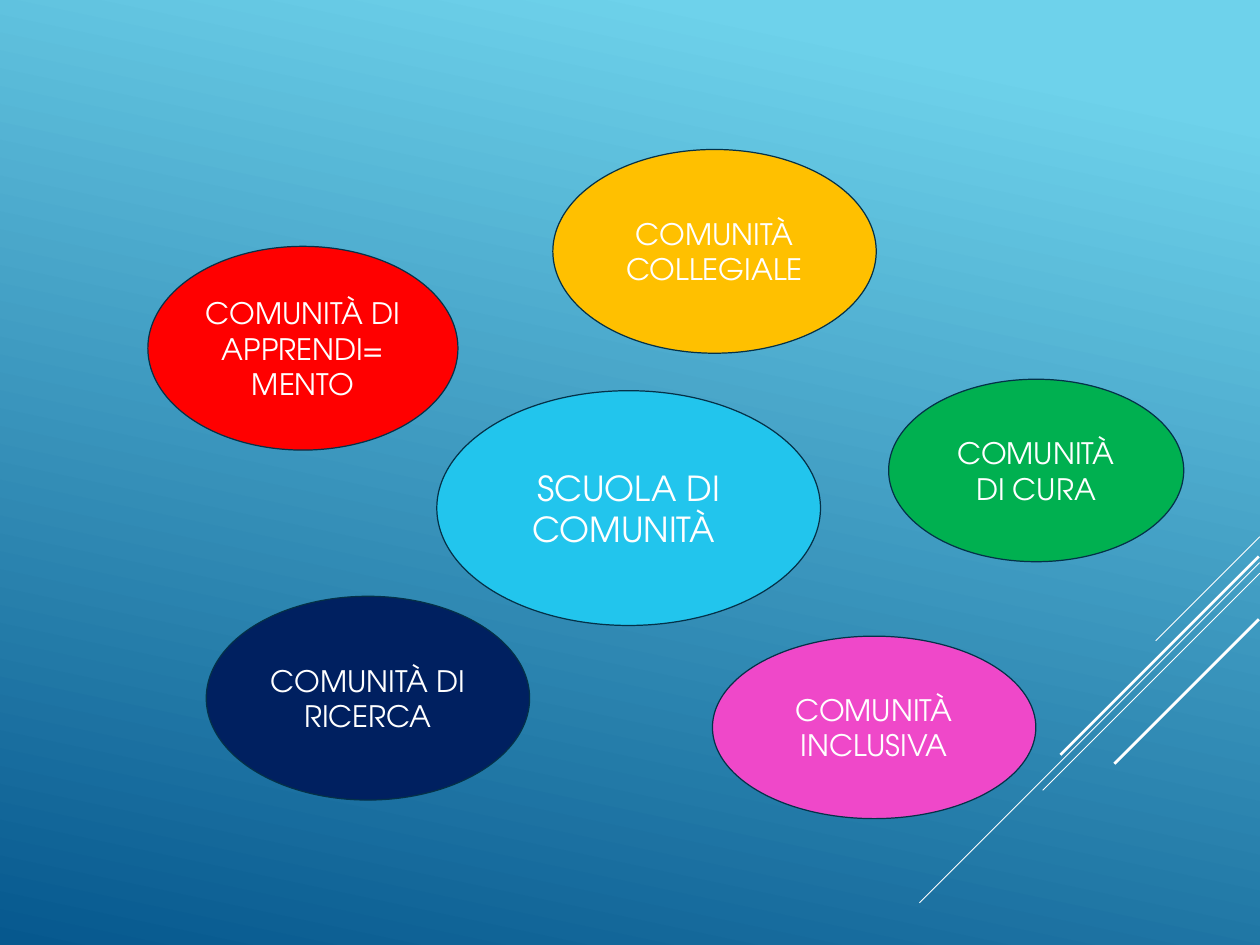
from dataclasses import dataclass

from lxml import etree
from pptx import Presentation
from pptx.dml.color import RGBColor
from pptx.enum.shapes import MSO_CONNECTOR, MSO_SHAPE
from pptx.enum.text import MSO_ANCHOR, PP_ALIGN
from pptx.oxml.ns import qn
from pptx.slide import Slide
from pptx.util import Pt

OVAL = MSO_SHAPE.OVAL
STRAIGHT = MSO_CONNECTOR.STRAIGHT
MIDDLE = MSO_ANCHOR.MIDDLE
CENTER = PP_ALIGN.CENTER

WIDTH, HEIGHT = 1024, 768


# Colours and type
@dataclass(frozen=True)
class Theme:
    font: str = "TeX Gyre Adventor"
    large: int = 28
    normal: int = 24
    white: str = "FFFFFF"
    edge: str = "043148"
    top: str = "6ED2EB"
    base: str = "06588E"
    sky: str = "22C5ED"
    red: str = "FF0000"
    gold: str = "FFC000"
    green: str = "00B050"
    pink: str = "EF48C9"
    navy: str = "002060"


THEME = Theme()


@dataclass(frozen=True)
class Bubble:
    text: str
    left: float
    top: float
    width: float
    height: float
    fill: str
    size: int = THEME.normal


@dataclass(frozen=True)
class Streak:
    """A diagonal at 45 degrees, running down and left from its start."""
    x: float
    y: float
    span: float
    weight: float


STREAKS = [
    Streak(1023.8, 436.2, 84.6, 0.75),
    Streak(1023.8, 457.2, 276.5, 0.75),
    Streak(1023.8, 465.8, 176.4, 0.75),
    Streak(1023.1, 452.2, 161.3, 2.25),
    Streak(1023.1, 503.3, 117.4, 2.25),
]

BUBBLES = [
    Bubble("SCUOLA DI COMUNITÀ ", 355, 317.5, 311.8, 190.8, THEME.sky, THEME.large),
    Bubble("COMUNITÀ DI APPRENDI=\nMENTO", 120.2, 200.2, 252, 165.6, THEME.red),
    Bubble("COMUNITÀ COLLEGIALE", 449.3, 121.5, 262.8, 165.6, THEME.gold),
    Bubble("COMUNITÀ DI CURA", 722.2, 308.2, 239.8, 148.3, THEME.green),
    Bubble("COMUNITÀ INCLUSIVA", 579, 517, 262.8, 148.3, THEME.pink),
    Bubble("COMUNITÀ DI RICERCA", 167.6, 484.6, 262.8, 165.6, THEME.navy),
]


def rgb(code: str) -> RGBColor:
    return RGBColor.from_string(code)


def paint_back(slide: Slide) -> None:
    fill = slide.background.fill
    fill.gradient()
    fill.gradient_angle = 258
    stops = [(0.1, THEME.top), (1, THEME.base)]
    for stop, (place, code) in zip(fill.gradient_stops, stops):
        stop.position = place
        stop.color.rgb = rgb(code)


def draw_streak(slide: Slide, streak: Streak) -> None:
    line = slide.shapes.add_connector(
        STRAIGHT, Pt(streak.x), Pt(streak.y),
        Pt(streak.x - streak.span), Pt(streak.y + streak.span))
    line.line.color.rgb = rgb(THEME.white)
    line.line.width = Pt(streak.weight)
    etree.SubElement(line._element.spPr, qn("a:effectLst"))


def draw_bubble(slide: Slide, bubble: Bubble) -> None:
    oval = slide.shapes.add_shape(
        OVAL, Pt(bubble.left), Pt(bubble.top), Pt(bubble.width), Pt(bubble.height))
    oval.shadow.inherit = False
    oval.fill.solid()
    oval.fill.fore_color.rgb = rgb(bubble.fill)
    oval.line.color.rgb = rgb(THEME.edge)
    oval.line.width = Pt(1)
    frame = oval.text_frame
    frame.word_wrap = True
    frame.vertical_anchor = MIDDLE
    frame.text = bubble.text
    for para in frame.paragraphs:
        para.alignment = CENTER
        para.font.name = THEME.font
        para.font.size = Pt(bubble.size)
        para.font.color.rgb = rgb(THEME.white)


def main() -> None:
    deck = Presentation()
    deck.slide_width, deck.slide_height = Pt(WIDTH), Pt(HEIGHT)
    slide = deck.slides.add_slide(deck.slide_layouts[6])

    # Backdrop
    paint_back(slide)
    for streak in STREAKS:
        draw_streak(slide, streak)

    # Communities around the school
    for bubble in BUBBLES:
        draw_bubble(slide, bubble)

    deck.save("out.pptx")


if __name__ == "__main__":
    main()
